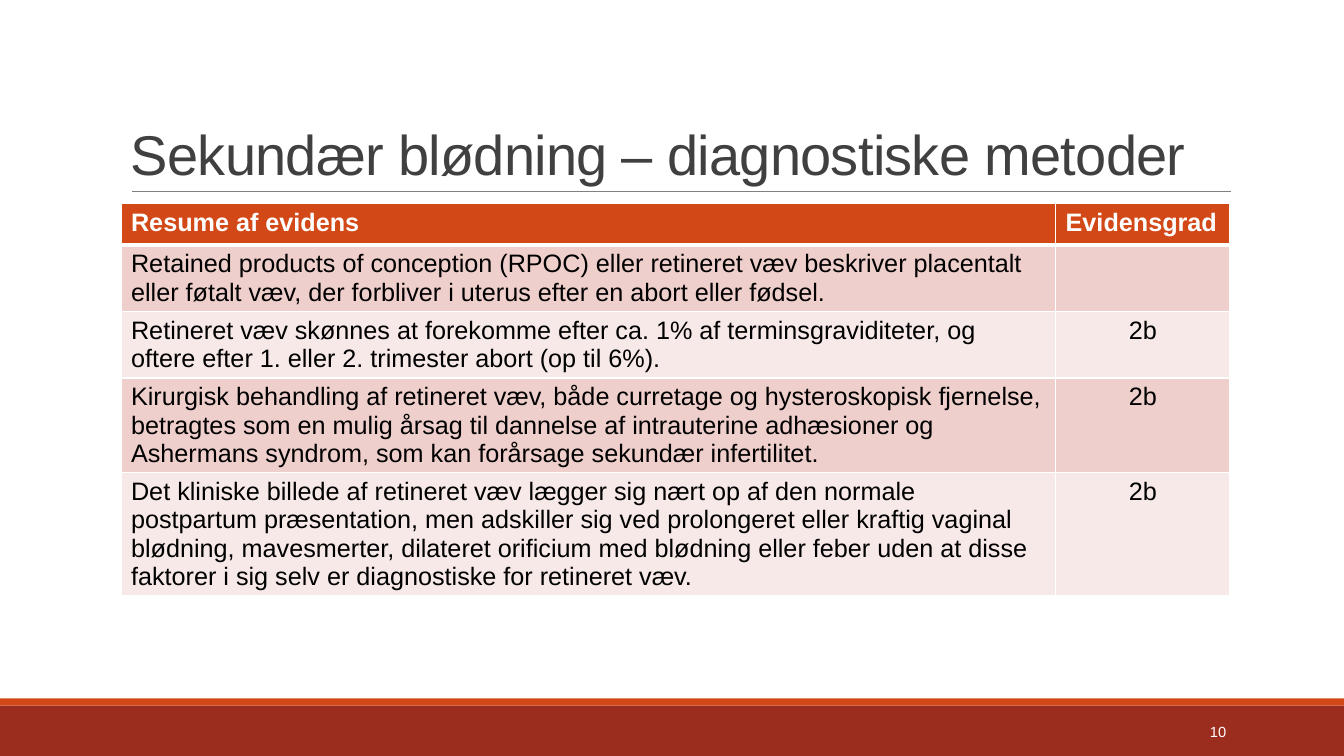
import dataclasses

import lxml.etree
import pptx
import pptx.dml.color
import pptx.enum.shapes
import pptx.enum.text
import pptx.oxml.ns
import pptx.util

Inches = pptx.util.Inches
Pt = pptx.util.Pt
qn = pptx.oxml.ns.qn
ALIGN = pptx.enum.text.PP_ALIGN
ANCHOR = pptx.enum.text.MSO_ANCHOR

FONT = "Arial"
COLORS = {
    "rust": "9B2D1F", "orange": "D34817", "rule": "808080", "title": "404040",
    "white": "FFFFFF", "black": "000000", "dark": "EFCFCC", "light": "F7E9E8",
}


@dataclasses.dataclass
class Band:
    top: float
    height: float
    color: str


@dataclasses.dataclass
class Label:
    text: str
    box: tuple[float, float, float, float]
    size: float
    color: str
    align: int
    anchor: int
    leading: float = 1.0
    spacing: int = 0


@dataclasses.dataclass
class Finding:
    text: str
    grade: str
    lines: int


BANDS = [Band(7, 0.5, "rust"), Band(6.93, 0.07, "orange")]
LABELS = [
    Label("Sekundær blødning – diagnostiske metoder", (1.2, 0.31, 11, 1.59),
          40, "title", ALIGN.LEFT, ANCHOR.BOTTOM, 0.85, -50),
    Label("10", (10.83, 7.06, 1.43, 0.4), 10.5, "white",
          ALIGN.RIGHT, ANCHOR.MIDDLE),
]
HEADS = ("Resume af evidens", "Evidensgrad")
WIDTHS = (9.27, 1.73)
FINDINGS = [
    Finding("Retained products of conception (RPOC) eller retineret væv "
            "beskriver placentalt eller føtalt væv, der forbliver i uterus "
            "efter en abort eller fødsel.", "", 2),
    Finding("Retineret væv skønnes at forekomme efter ca. 1% af "
            "terminsgraviditeter, og oftere efter 1. eller 2. trimester "
            "abort (op til 6%).", "2b", 2),
    Finding("Kirurgisk behandling af retineret væv, både curretage og "
            "hysteroskopisk fjernelse, betragtes som en mulig årsag til "
            "dannelse af intrauterine adhæsioner og Ashermans syndrom, som "
            "kan forårsage sekundær infertilitet.", "2b", 3),
    Finding("Det kliniske billede af retineret væv lægger sig nært op af den "
            "normale postpartum præsentation, men adskiller sig ved "
            "prolongeret eller kraftig vaginal blødning, mavesmerter, "
            "dilateret orificium med blødning eller feber uden at disse "
            "faktorer i sig selv er diagnostiske for retineret væv.", "2b", 4),
]


def rgb(name: str) -> pptx.dml.color.RGBColor:
    return pptx.dml.color.RGBColor.from_string(COLORS[name])


def style(para, size: float, color: str, align: int, bold: bool = False) -> None:
    para.alignment = align
    for run in para.runs:
        run.font.name = FONT
        run.font.size = Pt(size)
        run.font.bold = bold
        run.font.color.rgb = rgb(color)


def draw_band(slide, band: Band) -> None:
    bar = slide.shapes.add_shape(
        pptx.enum.shapes.MSO_SHAPE.RECTANGLE, 0, Inches(band.top),
        Inches(13.33), Inches(band.height))
    bar.shadow.inherit = False
    bar.fill.solid()
    bar.fill.fore_color.rgb = rgb(band.color)
    bar.line.fill.background()


def draw_rule(slide) -> None:
    rule = slide.shapes.add_connector(
        pptx.enum.shapes.MSO_CONNECTOR.STRAIGHT,
        Inches(1.31), Inches(1.9), Inches(12.21), Inches(1.9))
    rule.line.color.rgb = rgb("rule")
    rule.line.width = Pt(0.5)
    lxml.etree.SubElement(rule.element.spPr, qn("a:effectLst"))


def draw_label(slide, label: Label) -> None:
    box = slide.shapes.add_textbox(*map(Inches, label.box))
    frame = box.text_frame
    frame.word_wrap = True
    frame.vertical_anchor = label.anchor
    frame.text = label.text
    para = frame.paragraphs[0]
    para.line_spacing = label.leading
    style(para, label.size, label.color, label.align)
    if label.spacing:
        for props in box.element.iter(qn("a:rPr")):
            props.set("spc", str(label.spacing))


def add_edges(cell, widths: dict[str, float]) -> None:
    props = cell.get_or_add_tcPr()
    for side, width in widths.items():
        line = lxml.etree.SubElement(props, qn(f"a:ln{side}"), w=str(Pt(width)))
        fill = lxml.etree.SubElement(line, qn("a:solidFill"))
        lxml.etree.SubElement(fill, qn("a:srgbClr"), val=COLORS["white"])


def draw_table(slide) -> None:
    heights = [0.41] + [0.1 + 0.28 * item.lines for item in FINDINGS]
    texts = [HEADS] + [(item.text, item.grade) for item in FINDINGS]
    holder = slide.shapes.add_table(
        len(texts), len(WIDTHS), Inches(1.2), Inches(2.02),
        Inches(sum(WIDTHS)), Inches(sum(heights)))
    table = holder.table
    for column, width in zip(table.columns, WIDTHS):
        column.width = Inches(width)
    for row, height in zip(table.rows, heights):
        row.height = Inches(height)

    # White edges, thicker below the header
    for index, row in enumerate(holder.element.iter(qn("a:tr"))):
        edges = {"L": 1, "R": 1, "T": 3 if index == 1 else 1,
                 "B": 3 if index == 0 else 1}
        for cell in row.iter(qn("a:tc")):
            add_edges(cell, edges)

    # Cell text and banded fills
    for index, pair in enumerate(texts):
        head = index == 0
        shade = "orange" if head else ("dark" if index % 2 else "light")
        for col, text in enumerate(pair):
            cell = table.cell(index, col)
            cell.fill.solid()
            cell.fill.fore_color.rgb = rgb(shade)
            cell.text_frame.text = text
            align = ALIGN.CENTER if col and not head else ALIGN.LEFT
            style(cell.text_frame.paragraphs[0], 18,
                  "white" if head else "black", align, head)


def main() -> None:
    deck = pptx.Presentation()
    deck.slide_width = Inches(13.33)
    deck.slide_height = Inches(7.5)
    slide = deck.slides.add_slide(deck.slide_layouts[6])

    # Footer bands and title rule
    for band in BANDS:
        draw_band(slide, band)
    draw_rule(slide)

    # Evidence table, title and page number
    draw_table(slide)
    for label in LABELS:
        draw_label(slide, label)
    deck.save("out.pptx")


if __name__ == "__main__":
    main()
